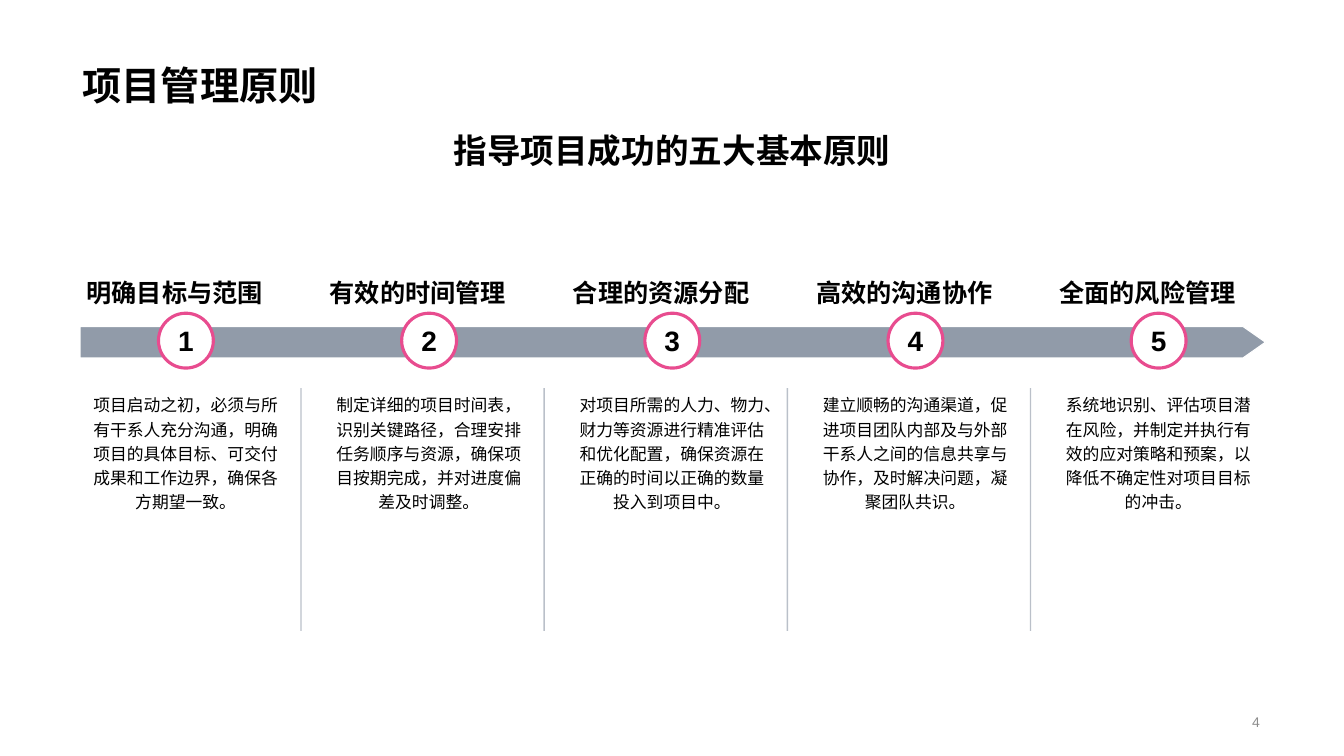
from lxml import etree
from pptx import Presentation
from pptx.dml.color import RGBColor
from pptx.enum.shapes import MSO_CONNECTOR, MSO_SHAPE
from pptx.enum.text import MSO_ANCHOR, PP_ALIGN
from pptx.oxml.ns import qn
from pptx.util import Pt

LEFT, CENTER, RIGHT = PP_ALIGN.LEFT, PP_ALIGN.CENTER, PP_ALIGN.RIGHT
TOP, MIDDLE, BOTTOM = MSO_ANCHOR.TOP, MSO_ANCHOR.MIDDLE, MSO_ANCHOR.BOTTOM
ARROW, CIRCLE = MSO_SHAPE.RIGHT_ARROW, MSO_SHAPE.OVAL
STRAIGHT = MSO_CONNECTOR.STRAIGHT

BLACK = RGBColor(0x00, 0x00, 0x00)
WHITE = RGBColor(0xFF, 0xFF, 0xFF)
SLATE = RGBColor(0x76, 0x83, 0x94)
PINK = RGBColor(0xE8, 0x4C, 0x8F)
GREY = RGBColor(0x8C, 0x8C, 0x8C)
CJK, LATIN = "Noto Sans CJK SC", "Arial"

PRINCIPLES = [
    ("明确目标与范围", "项目启动之初，必须与所有干系人充分沟通，明确项目的具体目标、可交付成果和工作边界，确保各方期望一致。"),
    ("有效的时间管理", "制定详细的项目时间表，识别关键路径，合理安排任务顺序与资源，确保项目按期完成，并对进度偏差及时调整。"),
    ("合理的资源分配", "对项目所需的人力、物力、财力等资源进行精准评估和优化配置，确保资源在正确的时间以正确的数量投入到项目中。"),
    ("高效的沟通协作", "建立顺畅的沟通渠道，促进项目团队内部及与外部干系人之间的信息共享与协作，及时解决问题，凝聚团队共识。"),
    ("全面的风险管理", "系统地识别、评估项目潜在风险，并制定并执行有效的应对策略和预案，以降低不确定性对项目目标的冲击。"),
]
PITCH = 173.7  # distance from one principle to the next


def write(shape, text, size, align, anchor, font=CJK, color=BLACK, bold=False, wrap=True):
    frame = shape.text_frame
    frame.word_wrap = wrap
    frame.vertical_anchor = anchor
    paragraph = frame.paragraphs[0]
    paragraph.text = text
    paragraph.alignment = align
    paragraph.font.size = Pt(size)
    paragraph.font.bold = bold
    paragraph.font.color.rgb = color
    paragraph.font.name = font
    properties = paragraph.font._element
    etree.SubElement(properties, qn("a:ea")).set("typeface", font)
    return paragraph


def add_text(slide, left, top, width, height, *content, **style):
    box = slide.shapes.add_textbox(Pt(left), Pt(top), Pt(width), Pt(height))
    return write(box, *content, **style)


def set_opacity(color_format_parent, percent):
    color = color_format_parent.find(".//" + qn("a:srgbClr"))
    etree.SubElement(color, qn("a:alpha")).set("val", str(percent * 1000))


def add_headings(slide, left, top, width):
    add_text(slide, left, top, width, 70.6, "项目管理原则", 28, LEFT, BOTTOM, bold=True)
    add_text(slide, left + 1, top + 79.2, width - 1, 82, "指导项目成功的五大基本原则",
             24, CENTER, TOP, bold=True)


def add_timeline(slide, left, top, width, height):
    arrow = slide.shapes.add_shape(ARROW, Pt(left), Pt(top), Pt(width), Pt(height))
    arrow.shadow.inherit = False
    arrow.adjustments[0] = 1
    arrow.adjustments[1] = 0.714
    arrow.fill.solid()
    arrow.fill.fore_color.rgb = SLATE
    set_opacity(arrow._element.spPr.find(qn("a:solidFill")), 80)
    arrow.line.color.rgb = WHITE
    arrow.line.width = Pt(0.75)


def add_principle(slide, left, top, number, name, description):
    add_text(slide, left, top, 167, 51.8, name, 18, CENTER, BOTTOM, bold=True)

    # Numbered marker on the timeline
    marker = slide.shapes.add_shape(CIRCLE, Pt(left + 71.9), Pt(top + 52.3), Pt(39.2), Pt(39.2))
    marker.shadow.inherit = False
    marker.fill.solid()
    marker.fill.fore_color.rgb = WHITE
    marker.line.color.rgb = PINK
    marker.line.width = Pt(2.25)
    write(marker, str(number), 20, CENTER, MIDDLE, font=LATIN, bold=True, wrap=False)

    body = add_text(slide, left + 15.6, top + 104.4, 151.4, 196.6, description, 12, CENTER, TOP)
    body.line_spacing = 1.2


def add_divider(slide, x, top, height):
    divider = slide.shapes.add_connector(STRAIGHT, Pt(x), Pt(top), Pt(x), Pt(top + height))
    divider.line.color.rgb = SLATE
    divider.line.width = Pt(1)
    properties = divider._element.spPr
    set_opacity(properties, 50)
    etree.SubElement(properties, qn("a:effectLst"))


def add_principles(slide, left, top):
    add_timeline(slide, left + 16, top + 61.9, 846.6, 22.3)
    for index, (name, description) in enumerate(PRINCIPLES):
        column = left + index * PITCH
        add_principle(slide, column, top, index + 1, name, description)
        if index:
            add_divider(slide, column, top + 105.8, 173.5)


def main():
    presentation = Presentation()
    presentation.slide_width = Pt(960)
    presentation.slide_height = Pt(540)
    slide = presentation.slides.add_slide(presentation.slide_layouts[6])

    add_headings(slide, 52, 10, 855)
    add_principles(slide, 41.3, 171.4)
    # Slide number
    add_text(slide, 619, 505, 288, 21.6, "4", 10, RIGHT, MIDDLE, font=LATIN, color=GREY)

    presentation.save("out.pptx")


if __name__ == "__main__":
    main()
